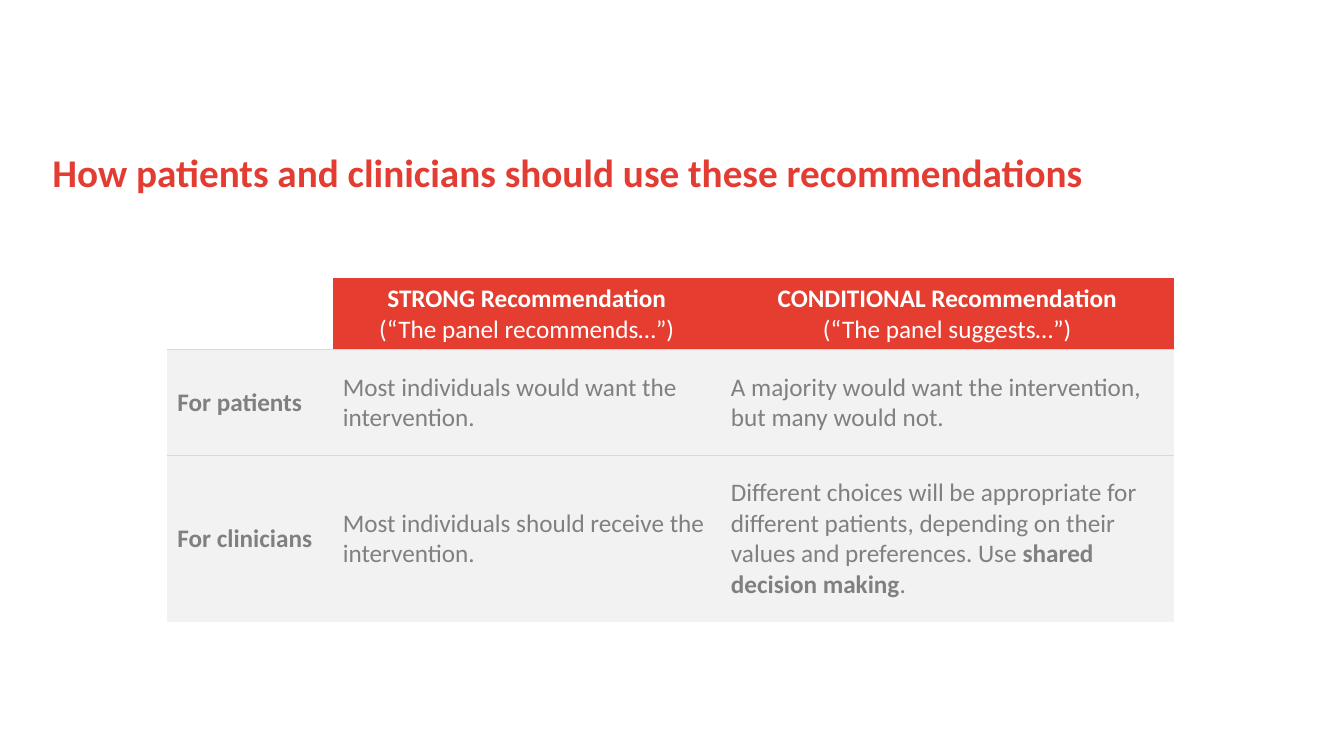
from dataclasses import dataclass

from lxml.etree import SubElement
from pptx import Presentation
from pptx.dml.color import RGBColor
from pptx.enum.text import MSO_ANCHOR, PP_ALIGN
from pptx.oxml.ns import qn
from pptx.slide import Slide
from pptx.table import Table, _Cell
from pptx.util import Inches, Pt

FONT = "Calibri"
TITLE_RED, HEAD_RED = "E33D33", "E53E31"
WHITE, GREY, PALE, RULE = "FFFFFF", "808080", "F2F2F2", "D9D9D9"
COLS = (1.64, 3.85, 4.49)
ROWS = (0.7, 1.05, 1.65)


@dataclass
class Part:
    text: str
    bold: bool = False


@dataclass
class Entry:
    lines: list[list[Part]]
    ink: str = GREY
    fill: str = PALE
    align: PP_ALIGN = PP_ALIGN.LEFT


def color(code: str) -> RGBColor:
    return RGBColor.from_string(code)


def head(name: str, quote: str) -> Entry:
    lines = [[Part(name, True)], [Part(quote)]]
    return Entry(lines, WHITE, HEAD_RED, PP_ALIGN.CENTER)


def body(*parts: Part) -> Entry:
    return Entry([list(parts)])


GRID: list[list[Entry | None]] = [
    [
        None,
        head("STRONG Recommendation", "(“The panel recommends…”)"),
        head("CONDITIONAL Recommendation", "(“The panel suggests…”)"),
    ],
    [
        body(Part("For patients", True)),
        body(Part("Most individuals would want the intervention.")),
        body(Part("A majority would want the intervention, but many would not.")),
    ],
    [
        body(Part("For clinicians", True)),
        body(Part("Most individuals should receive the intervention.")),
        body(
            Part("Different choices will be appropriate for different patients, "
                 "depending on their values and preferences. Use "),
            Part("shared decision making", True),
            Part("."),
        ),
    ],
]


def add_title(slide: Slide, text: str) -> None:
    title = slide.shapes.title
    title.left, title.top = Inches(0.42), Inches(1.47)
    title.width, title.height = Inches(12), Inches(0.78)
    frame = title.text_frame
    frame.text = text
    frame.word_wrap = True
    frame.vertical_anchor = MSO_ANCHOR.TOP
    line = frame.paragraphs[0]
    line.alignment = PP_ALIGN.LEFT
    line.line_spacing = 0.9
    font = line.runs[0].font
    font.name, font.size, font.bold = FONT, Pt(28), True
    font.color.rgb = color(TITLE_RED)


def set_edges(cell: _Cell, top: bool, base: bool) -> None:
    props = cell._tc.get_or_add_tcPr()
    edges = {"a:lnL": False, "a:lnR": False, "a:lnT": top, "a:lnB": base}
    for spot, (tag, shown) in enumerate(edges.items()):
        edge = SubElement(props, qn(tag), w=str(Pt(1)))
        if shown:
            fill = SubElement(edge, qn("a:solidFill"))
            SubElement(fill, qn("a:srgbClr"), val=RULE)
        else:
            SubElement(edge, qn("a:noFill"))
        props.insert(spot, edge)  # borders come before the fill


def fill_cell(cell: _Cell, entry: Entry | None) -> None:
    if entry is None:
        cell.fill.background()
        return
    cell.fill.solid()
    cell.fill.fore_color.rgb = color(entry.fill)
    cell.vertical_anchor = MSO_ANCHOR.MIDDLE
    frame = cell.text_frame
    for spot, parts in enumerate(entry.lines):
        line = frame.add_paragraph() if spot else frame.paragraphs[0]
        line.alignment = entry.align
        for part in parts:
            run = line.add_run()
            run.text = part.text
            font = run.font
            font.name, font.size, font.bold = FONT, Pt(18), part.bold
            font.color.rgb = color(entry.ink)


def add_grid(slide: Slide) -> None:
    frame = slide.shapes.add_table(
        len(ROWS), len(COLS), Inches(1.66), Inches(2.76),
        Inches(sum(COLS)), Inches(sum(ROWS)))
    table: Table = frame.table
    table.first_row = table.horz_banding = False
    for col, width in zip(table.columns, COLS):
        col.width = Inches(width)
    for row, height in zip(table.rows, ROWS):
        row.height = Inches(height)
    for r, entries in enumerate(GRID):
        for c, entry in enumerate(entries):
            cell = table.cell(r, c)
            fill_cell(cell, entry)
            set_edges(cell, top=r > 0, base=r < len(ROWS) - 1)


def main() -> None:
    deck = Presentation()
    deck.slide_width, deck.slide_height = Inches(13.33), Inches(7.5)
    slide = deck.slides.add_slide(deck.slide_layouts[5])

    # Heading
    add_title(slide, "How patients and clinicians should use these recommendations")

    # Table of recommendations
    add_grid(slide)

    deck.save("out.pptx")


if __name__ == "__main__":
    main()
